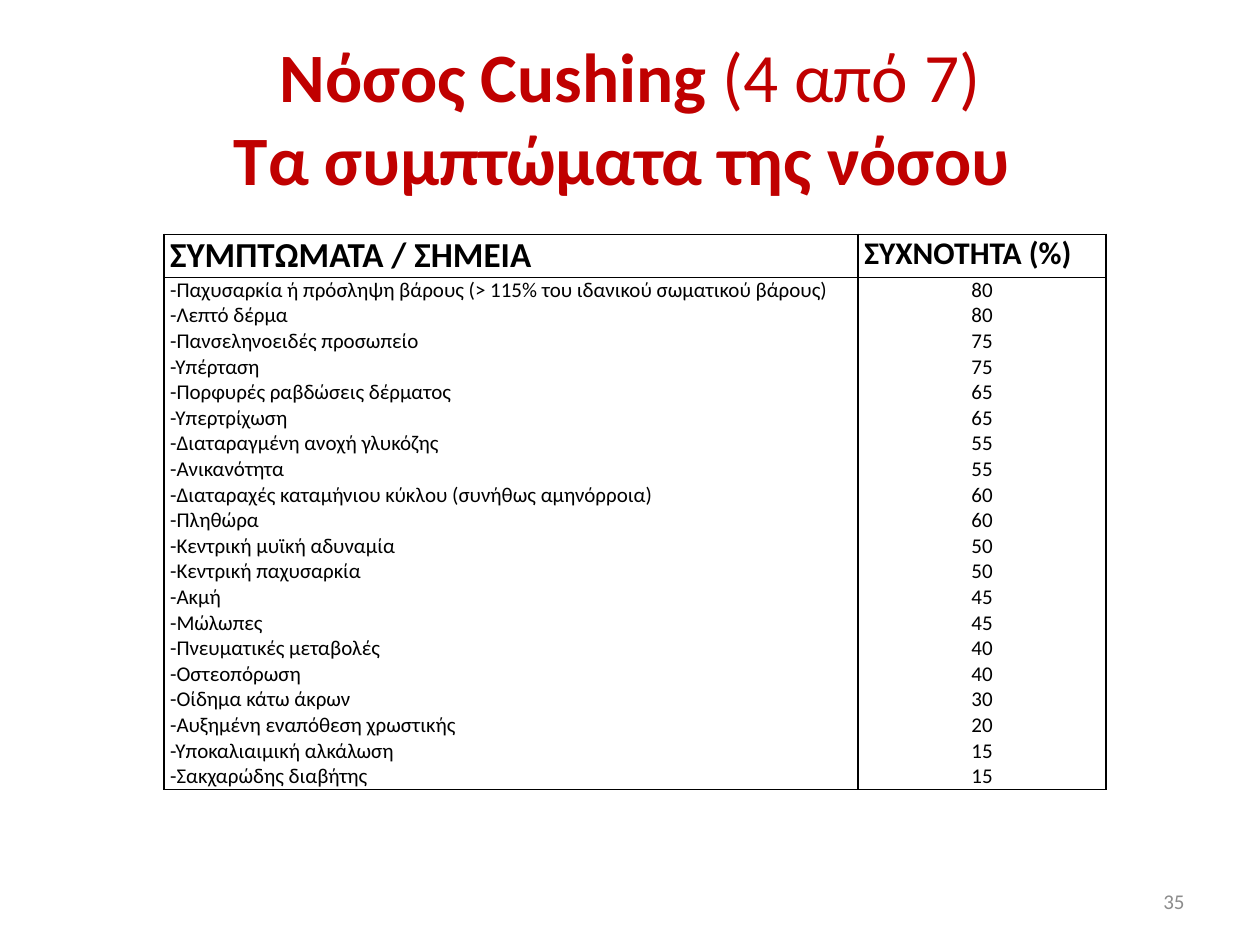
from lxml import etree
from pptx import Presentation
from pptx.dml.color import RGBColor
from pptx.enum.text import MSO_ANCHOR, MSO_AUTO_SIZE, PP_ALIGN
from pptx.oxml.ns import qn
from pptx.util import Pt

LEFT, MID, RIGHT = PP_ALIGN.LEFT, PP_ALIGN.CENTER, PP_ALIGN.RIGHT
CENTER = MSO_ANCHOR.MIDDLE
NO_FIT = MSO_AUTO_SIZE.NONE
TITLE_ONLY = 5

SIGNS = [
    ("Παχυσαρκία ή πρόσληψη βάρους (> 115% του ιδανικού σωματικού βάρους)", 80),
    ("Λεπτό δέρμα", 80),
    ("Πανσεληνοειδές προσωπείο", 75),
    ("Υπέρταση", 75),
    ("Πορφυρές ραβδώσεις δέρματος", 65),
    ("Υπερτρίχωση", 65),
    ("Διαταραγμένη ανοχή γλυκόζης", 55),
    ("Ανικανότητα", 55),
    ("Διαταραχές καταμήνιου κύκλου (συνήθως αμηνόρροια)", 60),
    ("Πληθώρα", 60),
    ("Κεντρική μυϊκή αδυναμία", 50),
    ("Κεντρική παχυσαρκία", 50),
    ("Ακμή", 45),
    ("Μώλωπες", 45),
    ("Πνευματικές μεταβολές", 40),
    ("Οστεοπόρωση", 40),
    ("Οίδημα κάτω άκρων", 30),
    ("Αυξημένη εναπόθεση χρωστικής", 20),
    ("Υποκαλιαιμική αλκάλωση", 15),
    ("Σακχαρώδης διαβήτης", 15),
]


def color(code):
    return RGBColor.from_string(code)


class Deck:
    """Holds the style and the current slide."""

    face, ink, red, gray = "Calibri", "000000", "C00000", "8C8C8C"

    def __init__(self, wide, high):
        self.show = Presentation()
        self.show.slide_width, self.show.slide_height = Pt(wide), Pt(high)
        self.slide = self.show.slides.add_slide(self.show.slide_layouts[TITLE_ONLY])

    def style(self, run, size, tint, bold=False):
        font = run.font
        font.name, font.size, font.bold = self.face, Pt(size), bold
        font.color.rgb = color(tint)

    def fill(self, frame, text, size, tint, align, bold=False):
        frame.text = text
        for para in frame.paragraphs:
            para.alignment = align
            for run in para.runs:
                self.style(run, size, tint, bold)

    def title(self, lines, box, size):
        shape = self.slide.shapes.title
        shape.left, shape.top, shape.width, shape.height = map(Pt, box)
        frame = shape.text_frame
        frame.word_wrap, frame.auto_size = True, NO_FIT
        frame.vertical_anchor = CENTER
        para = frame.paragraphs[0]
        para.alignment = MID
        for row, line in enumerate(lines):
            if row:
                para.add_line_break()
            for text, bold in line:
                run = para.add_run()
                run.text = text
                self.style(run, size, self.red, bold)
        for gap in para._p.findall(qn("a:br")):
            etree.SubElement(gap, qn("a:rPr"), sz=str(round(size * 100)))

    def label(self, text, box, size, align):
        frame = self.slide.shapes.add_textbox(*map(Pt, box)).text_frame
        frame.word_wrap, frame.vertical_anchor = True, CENTER
        self.fill(frame, text, size, self.gray, align)

    def border(self, cell):
        props = cell._tc.get_or_add_tcPr()
        for place, side in enumerate(("lnL", "lnR", "lnT", "lnB")):
            line = etree.Element(qn("a:" + side), w=str(Pt(1)))
            paint = etree.SubElement(line, qn("a:solidFill"))
            etree.SubElement(paint, qn("a:srgbClr"), val=self.ink)
            props.insert(place, line)

    def table(self, cells, spot, cols, rows):
        size = sum(cols), sum(rows)
        frame = self.slide.shapes.add_table(len(rows), len(cols), *map(Pt, spot + size))
        grid = frame.table
        grid.first_row = grid.horz_banding = False
        for col, wide in zip(grid.columns, cols):
            col.width = Pt(wide)
        for row, high, line in zip(grid.rows, rows, cells):
            row.height = Pt(high)
            for cell, (text, size, align, bold) in zip(row.cells, line):
                cell.margin_left = cell.margin_right = Pt(3.6)
                cell.margin_top = cell.margin_bottom = 0
                cell.fill.background()
                self.border(cell)
                self.fill(cell.text_frame, text, size, self.ink, align, bold)


def main():
    deck = Deck(720, 540)
    deck.title(
        [[("Νόσος Cushing ", True), ("(4 από 7)", False)],
         [("Τα συμπτώματα της νόσου ", True)]],
        (36, 21.6, 648, 90), 39.6)
    names = "\n".join("-" + name for name, _ in SIGNS)
    rates = "\n".join(str(rate) for _, rate in SIGNS)
    deck.table(
        [[("ΣΥΜΠΤΩΜΑΤΑ / ΣΗΜΕΙΑ", 20, LEFT, True), ("ΣΥΧΝΟΤΗΤΑ (%)", 18, LEFT, True)],
         [(names, 12, LEFT, False), (rates, 12, MID, False)]],
        (93.6, 134), (396.7, 141.8), (24.4, 292.6))
    deck.label("35", (516, 500.5, 168, 28.75), 12, RIGHT)
    deck.show.save("out.pptx")


if __name__ == "__main__":
    main()
